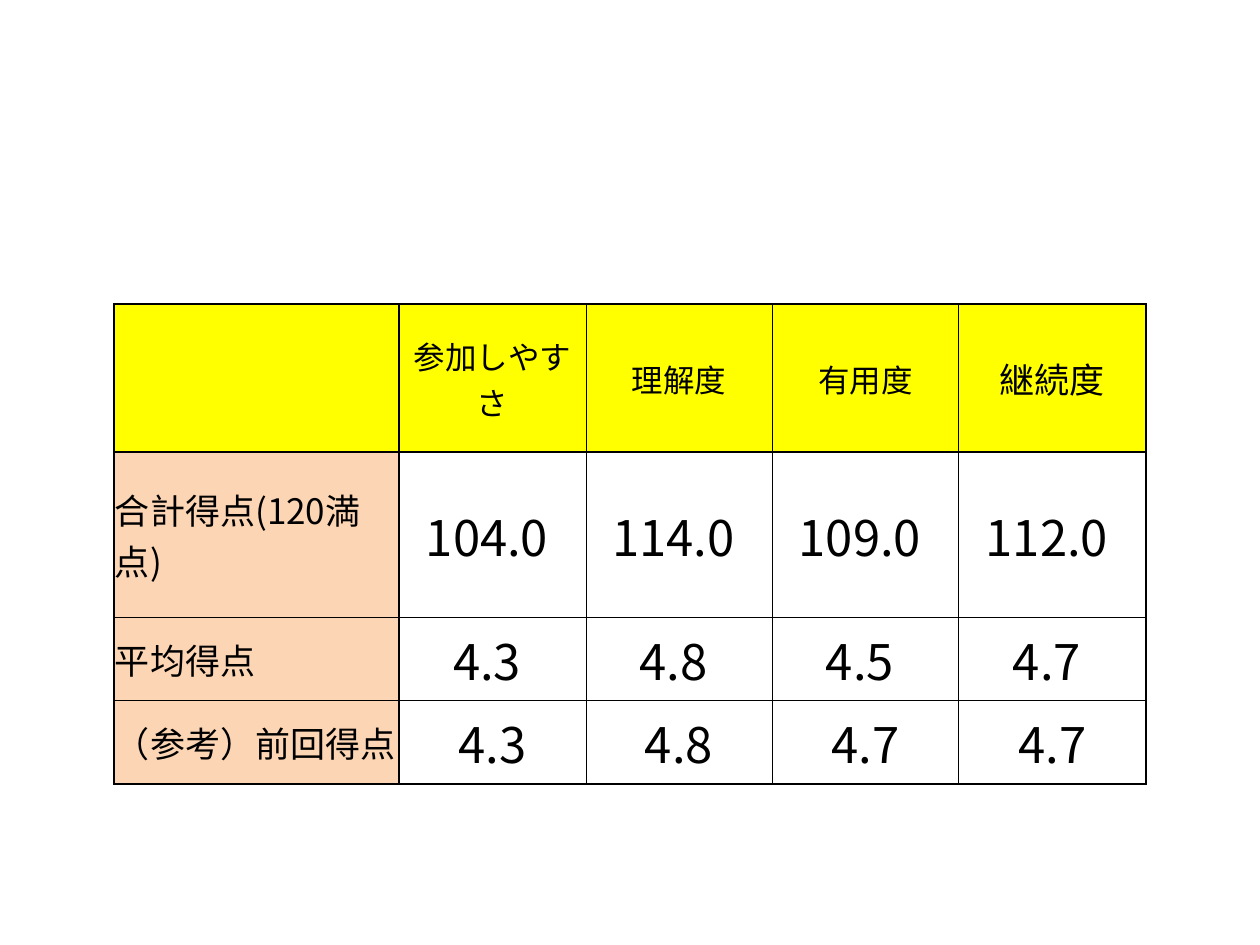
from lxml.etree import SubElement
from pptx import Presentation
from pptx.dml.color import RGBColor
from pptx.enum.text import MSO_ANCHOR, PP_ALIGN
from pptx.oxml.ns import qn
from pptx.util import Pt

# Content: header row, then one row per score
ROWS = [
    ["", "参加しやすさ", "理解度", "有用度", "継続度"],
    ["合計得点(120満点)", "104.0 ", "114.0 ", "109.0 ", "112.0 "],
    ["平均得点", "4.3 ", "4.8 ", "4.5 ", "4.7 "],
    ["（参考）前回得点", "4.3", "4.8", "4.7", "4.7"],
]

# Layout in px, 126 to the inch
PX = 914400 / 126
TABLE_LEFT, TABLE_TOP = 114, 304
COLUMN_WIDTHS = [285] + [187, 186, 187, 187]
ROW_HEIGHTS = [148, 165, 83, 84]

FONT = "Noto Sans CJK JP"
BLACK = RGBColor(0x00, 0x00, 0x00)
YELLOW = RGBColor(0xFF, 0xFF, 0x00)
PEACH = RGBColor(0xFC, 0xD5, 0xB4)
THICK, THIN = 1, 0.5


def emu(px):
    return round(px * PX)


def write_text(cell, text, size=20, align=PP_ALIGN.CENTER, color=BLACK):
    cell.vertical_anchor = MSO_ANCHOR.MIDDLE
    cell.margin_left = cell.margin_right = cell.margin_top = emu(1)
    cell.margin_bottom = 0
    paragraph = cell.text_frame.paragraphs[0]
    paragraph.alignment = align
    if not text:
        return
    run = paragraph.add_run()
    run.text = text
    run.font.size = Pt(size)
    run.font.name = FONT
    run.font.color.rgb = color
    SubElement(run.font._element, qn("a:ea"), typeface=FONT)


def draw_borders(cell, widths):
    properties = cell._tc.get_or_add_tcPr()
    for side, width in widths.items():
        line = SubElement(properties, qn(f"a:ln{side}"), w=str(Pt(width)))
        fill = SubElement(line, qn("a:solidFill"))
        SubElement(fill, qn("a:srgbClr"), val=str(BLACK))


def border_widths(row, column):
    """Thick around the table, under the header and beside the labels."""
    last_row, last_column = len(ROWS) - 1, len(ROWS[0]) - 1
    thick = {
        "L": column in (0, 1),
        "R": column in (0, last_column),
        "T": row in (0, 1),
        "B": row in (0, last_row),
    }
    return {side: THICK if is_thick else THIN for side, is_thick in thick.items()}


def cell_format(row, column):
    """Fill colour and text format for a place in the table."""
    if row == 0:
        return YELLOW, {"size": 20 if column == len(ROWS[0]) - 1 else 18}
    if column == 0:
        return PEACH, {"size": 20, "align": PP_ALIGN.LEFT}
    return None, {"size": 28}


def main():
    presentation = Presentation()
    presentation.slide_width = emu(1260)
    presentation.slide_height = emu(945)
    slide = presentation.slides.add_slide(presentation.slide_layouts[6])

    # Score table
    table = slide.shapes.add_table(
        len(ROWS), len(ROWS[0]), emu(TABLE_LEFT), emu(TABLE_TOP),
        emu(sum(COLUMN_WIDTHS)), emu(sum(ROW_HEIGHTS))).table
    table.first_row = table.horz_banding = False
    for column, width in zip(table.columns, COLUMN_WIDTHS):
        column.width = emu(width)
    for row, height in zip(table.rows, ROW_HEIGHTS):
        row.height = emu(height)

    # Cells
    for row, texts in enumerate(ROWS):
        for column, text in enumerate(texts):
            cell = table.cell(row, column)
            color, text_format = cell_format(row, column)
            write_text(cell, text, **text_format)
            draw_borders(cell, border_widths(row, column))
            if color is None:
                cell.fill.background()
            else:
                cell.fill.solid()
                cell.fill.fore_color.rgb = color

    presentation.save("out.pptx")


if __name__ == "__main__":
    main()
